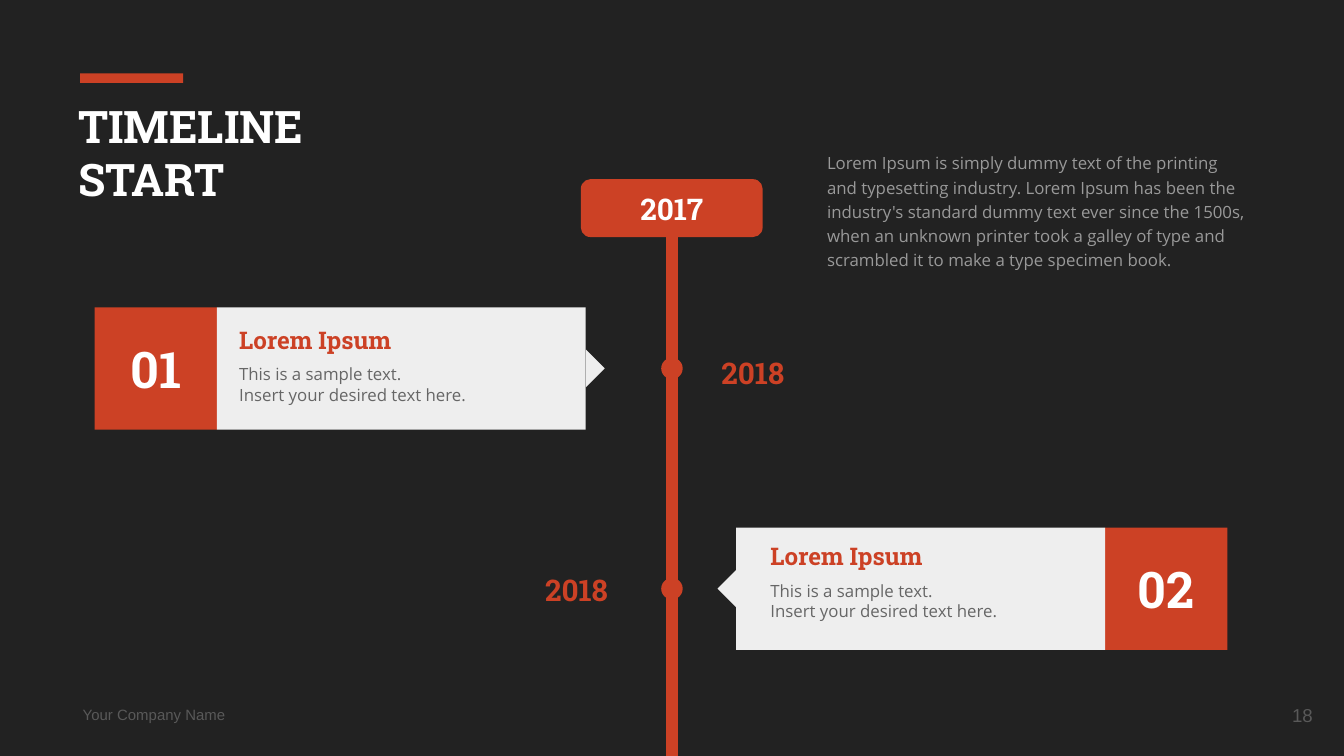
import pptx
import pptx.dml.color
import pptx.enum.shapes
import pptx.enum.text
import pptx.oxml.ns
import pptx.util
from lxml import etree

Pt = pptx.util.Pt
RGBColor = pptx.dml.color.RGBColor
MSO = pptx.enum.shapes.MSO_SHAPE
ALIGN = pptx.enum.text.PP_ALIGN
ANCHOR = pptx.enum.text.MSO_ANCHOR

DARK = RGBColor(0x22, 0x22, 0x22)
RED = RGBColor(0xCC, 0x41, 0x25)
WHITE = RGBColor(0xFF, 0xFF, 0xFF)
PALE = RGBColor(0xEE, 0xEE, 0xEE)
LIGHT_GREY = RGBColor(0x99, 0x99, 0x99)
MID_GREY = RGBColor(0x66, 0x66, 0x66)
DARK_GREY = RGBColor(0x59, 0x59, 0x59)
SLAB = "Roboto Slab"
SANS = "Open Sans"

prs = pptx.Presentation()
prs.slide_width, prs.slide_height = Pt(720), Pt(405)
s = prs.slides.add_slide(prs.slide_layouts[5])
s.background.fill.solid()
s.background.fill.fore_color.rgb = DARK


def add_text(text, box=None, sp=None, font=SLAB, size=16, color=RED, bold=False,
             align=ALIGN.LEFT, anchor=ANCHOR.MIDDLE, spacing=None):
    """Write text into sp, or into a new text box at box."""
    if sp is None:
        sp = s.shapes.add_textbox(*map(Pt, box))
    tf = sp.text_frame
    tf.word_wrap = True
    tf.auto_size = pptx.enum.text.MSO_AUTO_SIZE.NONE
    tf.vertical_anchor = anchor
    tf.margin_left = tf.margin_right = tf.margin_top = tf.margin_bottom = Pt(7.2)
    for i, line in enumerate(text.split("\n")):
        p = tf.paragraphs[0] if i == 0 else tf.add_paragraph()
        p.alignment = align
        if spacing:
            p.line_spacing = spacing
        r = p.add_run()
        r.text = line
        r.font.name, r.font.size, r.font.bold = font, Pt(size), bold
        r.font.color.rgb = color


def add_block(kind, box, color=RED):
    """Add a plain filled shape without outline or shadow."""
    sp = s.shapes.add_shape(kind, *map(Pt, box))
    sp.shadow.inherit = False
    sp.fill.solid()
    sp.fill.fore_color.rgb = color
    sp.line.fill.background()
    return sp


# Title with accent bar
add_block(MSO.RECTANGLE, (42.9, 39.3, 55.2, 5.2))
title = s.shapes.title
title.left, title.top, title.width, title.height = map(Pt, (34.6, 45.4, 324.7, 83.5))
add_text("TIMELINE\nSTART", sp=title, size=24, color=WHITE, bold=True, anchor=ANCHOR.TOP)

# Introduction
add_text("Lorem Ipsum is simply dummy text of the printing and typesetting industry. "
         "Lorem Ipsum has been the industry's standard dummy text ever since the 1500s, "
         "when an unknown printer took a galley of type and scrambled it to make a type "
         "specimen book.",
         (436, 72.7, 239.8, 80), font=SANS, size=9, color=LIGHT_GREY,
         anchor=ANCHOR.TOP, spacing=1.2)

# Timeline axis and starting year
axis = s.shapes.add_connector(pptx.enum.shapes.MSO_CONNECTOR.STRAIGHT,
                              Pt(360), Pt(124.6), Pt(360), Pt(405))
axis.line.color.rgb = RED
axis.line.width = Pt(6)
etree.SubElement(axis._element.spPr, pptx.oxml.ns.qn("a:effectLst"))
start = add_block(MSO.ROUNDED_RECTANGLE, (311.2, 96, 97.4, 31))
start.adjustments[0] = 0.167
add_text("2017", sp=start, color=WHITE, bold=True, align=ALIGN.CENTER)

# Events: number, middle y, number x, panel x, arrow centre x, arrow rotation,
# text x, heading offset from the middle, year x, year offset, year alignment
SIDE, PANEL, ARROW, DOT = 65.5, 197.6, 14.2, 11.5
EVENTS = [
    ("01", 197.4, 50.7, 116.2, 313.9, 225, 121, -15.2, 379.4, 2.4, ALIGN.LEFT),
    ("02", 315.4, 592, 394.4, 394.4, 45, 405.6, -17.4, 267.8, 0.6, ALIGN.RIGHT),
]
for (number, y, number_x, panel_x, arrow_x, turn,
     text_x, text_dy, year_x, year_dy, year_align) in EVENTS:
    add_block(MSO.OVAL, (360 - DOT / 2, y - DOT / 2, DOT, DOT))
    add_text("2018", (year_x, y + year_dy - 12, 65, 24), bold=True, align=year_align)

    square = add_block(MSO.RECTANGLE, (number_x, y - SIDE / 2, SIDE, SIDE))
    add_text(number, sp=square, size=27, color=WHITE, bold=True, align=ALIGN.CENTER)
    add_block(MSO.RECTANGLE, (panel_x, y - SIDE / 2, PANEL, SIDE), PALE)
    arrow = add_block(MSO.RIGHT_TRIANGLE,
                      (arrow_x - ARROW / 2, y - ARROW / 2, ARROW, ARROW), PALE)
    arrow.rotation = turn

    heading_y = y + text_dy
    add_text("Lorem Ipsum", (text_x, heading_y - 6, 180.7, 12), size=13, bold=True)
    add_text("This is a sample text.\nInsert your desired text here.",
             (text_x, heading_y + 7.2, 180.7, 33), font=SANS, size=9, color=MID_GREY)

# Footer and slide number
add_text("Your Company Name", (37.2, 373.2, 120, 19), font="Arial", size=8, color=DARK_GREY)
add_text("18", (667.2, 367.5, 43.2, 31), font="Arial", size=10, color=DARK_GREY,
         align=ALIGN.RIGHT)

prs.save("out.pptx")
